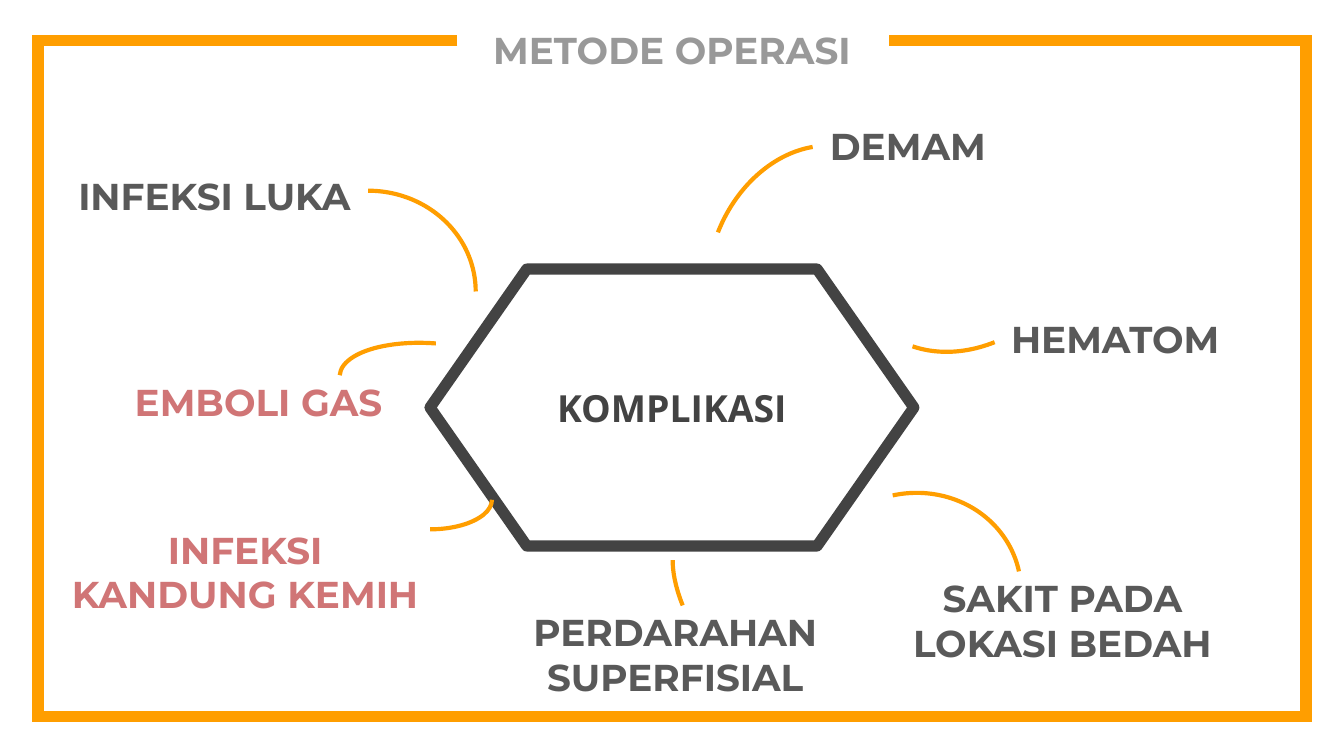
from lxml import etree
from pptx import Presentation
from pptx.dml.color import RGBColor
from pptx.enum.shapes import MSO_SHAPE as Shape
from pptx.enum.text import MSO_ANCHOR as Anchor, MSO_AUTO_SIZE as AutoSize, PP_ALIGN as Align
from pptx.oxml.ns import qn
from pptx.util import Pt

ORANGE = RGBColor(0xFF, 0x9E, 0x00)
CHARCOAL = RGBColor(0x43, 0x43, 0x43)
GREY = RGBColor(0x59, 0x59, 0x59)
LIGHT_GREY = RGBColor(0x99, 0x99, 0x99)
ROSE = RGBColor(0xD0, 0x75, 0x76)

LABEL_WIDTH, LABEL_HEIGHT = 209.5, 57.6
FULL_ARC = (162, 0)      # quarter turn
SHORT_ARC = (162, 203.7)
TINY_ARC = (178.65, 203.7)


def write(shape, text, color, font="Montserrat", anchor=Anchor.TOP):
    """Fill the shape with one centred, bold paragraph."""
    frame = shape.text_frame
    frame_format = {
        "word_wrap": True, "auto_size": AutoSize.NONE, "vertical_anchor": anchor,
        "margin_left": Pt(7.2), "margin_right": Pt(7.2),
        "margin_top": Pt(7.2), "margin_bottom": Pt(7.2),
    }
    for name, value in frame_format.items():
        setattr(frame, name, value)
    frame.text = text
    paragraph = frame.paragraphs[0]
    paragraph.alignment = Align.CENTER
    run_font = paragraph.runs[0].font
    for name, value in {"name": font, "size": Pt(20), "bold": True}.items():
        setattr(run_font, name, value)
    run_font.color.rgb = color


def outline(shape, color, width):
    shape.shadow.inherit = False
    shape.fill.background()
    shape.line.color.rgb = color
    shape.line.width = Pt(width)


prs = Presentation()
prs.slide_width, prs.slide_height = Pt(720), Pt(405)
slide = prs.slides.add_slide(prs.slide_layouts[5])
shapes = slide.shapes

# Border, open at the top for the title
border_builder = shapes.build_freeform(Pt(245), Pt(21.7), scale=1)
border_points = [(20.4, 21.7), (20.4, 383.8), (699.6, 383.8), (699.6, 21.7), (476, 21.7)]
border_builder.add_line_segments([(Pt(x), Pt(y)) for x, y in border_points], close=False)
border = border_builder.convert_to_shape()
outline(border, ORANGE, 6)
border_line = border.line._get_or_add_ln()
etree.SubElement(border_line, qn("a:miter"), lim="800000")

title = shapes.title
title.left, title.top = Pt(255.3), Pt(7.2)
title.width, title.height = Pt(LABEL_WIDTH), Pt(LABEL_HEIGHT)
write(title, "METODE OPERASI", LIGHT_GREY)

hub = shapes.add_shape(Shape.FLOWCHART_PREPARATION, Pt(230.4), Pt(144.2), Pt(259.2), Pt(148.3))
outline(hub, CHARCOAL, 6)
write(hub, "KOMPLIKASI", CHARCOAL, "Open Sans", Anchor.MIDDLE)

# Label: text, colour, left, top; its arc: left, top, width, height, rotation, angles
complications = [
    ("INFEKSI LUKA", GREY, 10.1, 85.7, (139.7, 102.2, 115.2, 108), 0, FULL_ARC),
    ("DEMAM", GREY, 381.6, 59, (366.5, 90.7, 135.4, 106.6), 291.5, SHORT_ARC),
    ("HEMATOM", GREY, 492.7, 162, (453.6, 75.6, 135.4, 106.6), 140.3, TINY_ARC),
    ("EMBOLI GAS", ROSE, 33.8, 195.8, (211, 154.8, 41.8, 100.1), 274.4, FULL_ARC),
    ("SAKIT PADA LOKASI BEDAH", GREY, 464.4, 301, (432, 264.2, 115.2, 108), 347.9, FULL_ARC),
    ("PERDARAHAN SUPERFISIAL", GREY, 257, 319, (344.2, 306, 67.7, 26.6), 248, SHORT_ARC),
    ("INFEKSI KANDUNG KEMIH", ROSE, 26.6, 275, (214.6, 234.7, 31.7, 66.2), 90, FULL_ARC),
]
for text, color, left, top, arc_box, rotation, angles in complications:
    arc = shapes.add_shape(Shape.ARC, *map(Pt, arc_box))
    arc.rotation = rotation
    arc.adjustments[0], arc.adjustments[1] = angles
    outline(arc, ORANGE, 2.25)
    label = shapes.add_textbox(Pt(left), Pt(top), Pt(LABEL_WIDTH), Pt(LABEL_HEIGHT))
    write(label, text, color)

prs.save("out.pptx")
